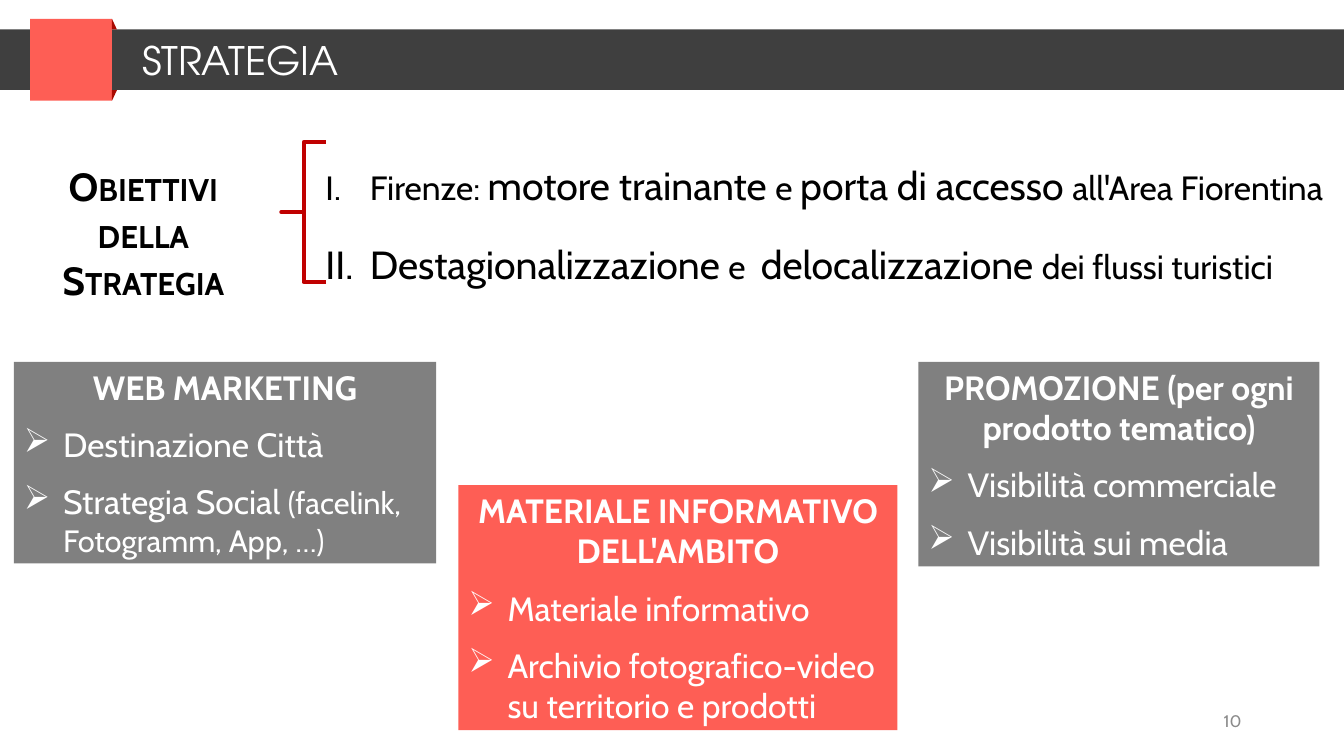
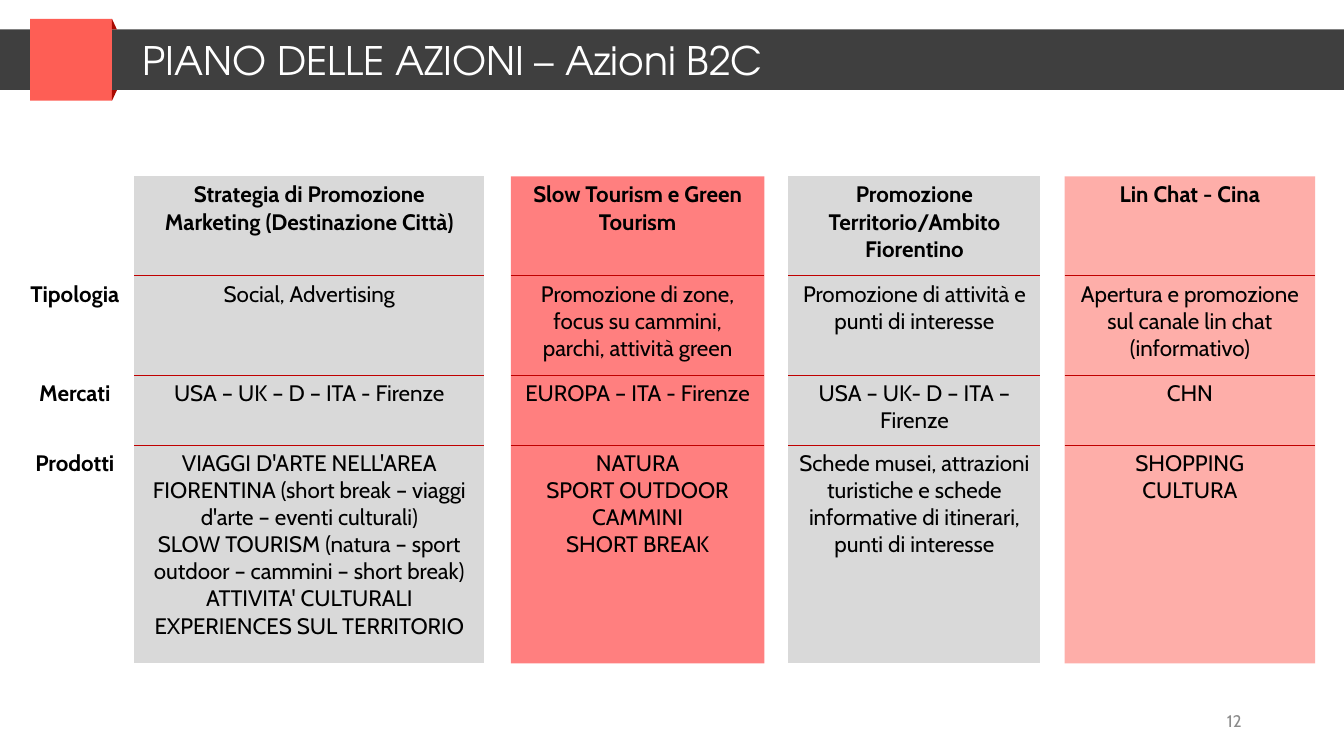
from lxml.etree import SubElement
from pptx import Presentation
from pptx.dml.color import RGBColor
from pptx.enum.shapes import MSO_SHAPE
from pptx.enum.text import MSO_ANCHOR, PP_ALIGN
from pptx.oxml.ns import qn
from pptx.util import Pt

RECTANGLE, TRIANGLE = MSO_SHAPE.RECTANGLE, MSO_SHAPE.RIGHT_TRIANGLE
BRACE = MSO_SHAPE.LEFT_BRACE
TOP, MIDDLE = MSO_ANCHOR.TOP, MSO_ANCHOR.MIDDLE
LEFT, CENTER, RIGHT = PP_ALIGN.LEFT, PP_ALIGN.CENTER, PP_ALIGN.RIGHT

TITLE_FONT, BODY_FONT = "TeX Gyre Adventor", "Cabin"
BLACK = RGBColor(0x00, 0x00, 0x00)
WHITE = RGBColor(0xFF, 0xFF, 0xFF)
CHARCOAL = RGBColor(0x3F, 0x3F, 0x3F)
GRAY = RGBColor(0x80, 0x80, 0x80)
LIGHT_GRAY = RGBColor(0xD9, 0xD9, 0xD9)
NUMBER_GRAY = RGBColor(0x8B, 0x8B, 0x8B)
CORAL = RGBColor(0xFE, 0x5E, 0x55)
FOLD_RED = RGBColor(0xA9, 0x0A, 0x01)
DARK_RED = RGBColor(0xC0, 0x00, 0x00)
RED = RGBColor(0xFF, 0x00, 0x00)

SLIDE_WIDTH, SLIDE_HEIGHT = 960, 540
INSETS = (7.2, 3.6)
NO_GRID_STYLE = "{2D5ABB26-0587-4C30-8999-92F81FD0307C}"

# Each paragraph is a list of (text, size) runs.
GOALS_LABEL = [("Obiettivi della Strategia", 28)]
GOALS = [
    [("Firenze: ", 24), ("motore trainante ", 28), ("e ", 24),
     ("porta di accesso ", 28), ("all'Area Fiorentina", 24)],
    [("Destagionalizzazione ", 28), ("e  ", 24),
     ("delocalizzazione ", 28), ("dei flussi turistici", 24)],
]

# (left, top, width, height), fill, heading, points
CARDS = [
    ((10, 258.5, 301.5, 144), GRAY, "WEB MARKETING",
     [[("Destinazione Città", 24)],
      [("Strategia Social ", 24), ("(facelink, Fotogramm, App, …)", 22)]]),
    ((327.5, 346.5, 313.5, 175), CORAL, "MATERIALE INFORMATIVO DELL'AMBITO",
     [[("Materiale informativo", 24)],
      [("Archivio fotografico-video su territorio e prodotti", 24)]]),
    ((656, 258.5, 286.5, 146), GRAY, "PROMOZIONE (per ogni prodotto tematico)",
     [[("Visibilità commerciale", 24)], [("Visibilità sui media", 24)]]),
]

ROW_LABELS = ["", "Tipologia", "Mercati", "Prodotti"]
# Fill, opacity in percent, then the cells from top to bottom
ACTIONS = [
    (LIGHT_GRAY, 100, [
        "Strategia di Promozione Marketing (Destinazione Città)",
        "Social, Advertising",
        "USA – UK – D – ITA - Firenze",
        "VIAGGI D'ARTE NELL'AREA FIORENTINA (short break – viaggi d'arte – eventi culturali)\n"
        "SLOW TOURISM (natura – sport outdoor – cammini – short break)\n"
        "ATTIVITA' CULTURALI\nEXPERIENCES SUL TERRITORIO"]),
    (RED, 50, [
        "Slow Tourism e Green Tourism",
        "Promozione di zone, focus su cammini, parchi, attività green",
        "EUROPA – ITA - Firenze",
        "NATURA\nSPORT OUTDOOR\nCAMMINI\nSHORT BREAK"]),
    (LIGHT_GRAY, 100, [
        "Promozione Territorio/Ambito Fiorentino",
        "Promozione di attività e punti di interesse",
        "USA – UK- D – ITA – Firenze",
        "Schede musei, attrazioni turistiche e schede informative di itinerari, punti di interesse"]),
    (CORAL, 50, [
        "Lin Chat - Cina",
        "Apertura e promozione sul canale lin chat (informativo)",
        "CHN",
        "SHOPPING\nCULTURA"]),
]
TABLE_LEFT, TABLE_TOP = 11, 126
COLUMN_WIDTHS = [85, 250, 19, 181, 17, 180, 17, 179]
ROW_HEIGHTS = [71, 71, 50, 156]


def add_shape(slide, kind, box, fill=None):
    shape = slide.shapes.add_shape(kind, *map(Pt, box))
    shape.shadow.inherit = False
    shape.line.fill.background()
    if fill is None:
        shape.fill.background()
    else:
        shape.fill.solid()
        shape.fill.fore_color.rgb = fill
    return shape


def set_frame(text_frame, anchor=TOP, insets=INSETS):
    text_frame.word_wrap = True
    text_frame.vertical_anchor = anchor
    text_frame.margin_left = text_frame.margin_right = Pt(insets[0])
    text_frame.margin_top = text_frame.margin_bottom = Pt(insets[1])


def add_text_box(slide, box, anchor=TOP, insets=INSETS):
    text_frame = slide.shapes.add_textbox(*map(Pt, box)).text_frame
    set_frame(text_frame, anchor, insets)
    return text_frame


def write(paragraph, runs, color, align=LEFT, bold=False, font=BODY_FONT, space=0):
    paragraph.alignment = align
    paragraph.space_before = paragraph.space_after = Pt(space)
    for text, size in runs:
        run = paragraph.add_run()
        run.text = text
        run.font.size = Pt(size)
        run.font.name = font
        run.font.bold = bold
        run.font.color.rgb = color


def set_bullet(paragraph, margin, hanging, tag, **attributes):
    properties = paragraph._p.get_or_add_pPr()
    properties.set("marL", str(Pt(margin)))
    properties.set("indent", str(-Pt(hanging)))
    SubElement(properties, qn(tag), **attributes)


def paragraphs_for(text_frame, count):
    """Return count paragraphs, starting with the one already there."""
    return [text_frame.paragraphs[0]] + [
        text_frame.add_paragraph() for _ in range(count - 1)]


def add_slide(presentation, title, number):
    """Add a slide with the title band, folded square and page number."""
    slide = presentation.slides.add_slide(presentation.slide_layouts[6])
    add_shape(slide, RECTANGLE, (0, 21, SLIDE_WIDTH, 43.2), CHARCOAL)
    add_shape(slide, RECTANGLE, (21.5, 13.5, 58.5, 58.5), CORAL)
    add_shape(slide, TRIANGLE, (80, 13.5, 3.5, 7.5), FOLD_RED)
    lower_fold = add_shape(slide, TRIANGLE, (80, 64.5, 3.5, 7.5), FOLD_RED)
    lower_fold._element.spPr.xfrm.set("flipV", "1")
    title_frame = add_text_box(slide, (101.5, 26, 759, 34), MIDDLE, (0, 0))
    write(title_frame.paragraphs[0], [(title, 28)], WHITE, font=TITLE_FONT)
    number_frame = add_text_box(slide, (678, 500.5, 216, 28.8), MIDDLE)
    write(number_frame.paragraphs[0], [(str(number), 12)], NUMBER_GRAY, RIGHT)
    return slide


def add_goals(slide):
    label = add_text_box(slide, (10, 112.5, 185, 108)).paragraphs[0]
    write(label, GOALS_LABEL, BLACK, CENTER, bold=True)
    label.runs[0]._r.get_or_add_rPr().set("cap", "small")

    brace = add_shape(slide, BRACE, (201, 101.5, 32, 100))
    brace.adjustments[0] = 0
    brace.line.color.rgb = DARK_RED
    brace.line.width = Pt(3)

    text_frame = add_text_box(slide, (226, 101.5, 731, 100), MIDDLE, (0, 0))
    for paragraph, runs in zip(paragraphs_for(text_frame, len(GOALS)), GOALS):
        write(paragraph, runs, BLACK, space=3)
        paragraph.line_spacing = 1.5
        set_bullet(paragraph, 38.2, 31.7, "a:buAutoNum", type="romanUcPeriod")


def add_card(slide, box, fill, heading, points):
    text_frame = add_shape(slide, RECTANGLE, box, fill).text_frame
    set_frame(text_frame)
    first, *others = paragraphs_for(text_frame, len(points) + 1)
    write(first, [(heading, 24)], WHITE, CENTER, bold=True, space=6)
    for paragraph, runs in zip(others, points):
        write(paragraph, runs, WHITE, space=6)
        set_bullet(paragraph, 28, 28, "a:buChar", char="➢")


def write_cell(cell, text, bold, space):
    lines = text.split("\n")
    for paragraph, line in zip(paragraphs_for(cell.text_frame, len(lines)), lines):
        write(paragraph, [(line, 16)], BLACK, CENTER, bold, space=space)


def fill_cell(cell, color, opacity):
    cell.fill.solid()
    cell.fill.fore_color.rgb = color
    if opacity < 100:
        color_element = cell._tc.tcPr.find(".//" + qn("a:srgbClr"))
        SubElement(color_element, qn("a:alpha"), val=str(opacity * 1000))


def add_border(cell, tag):
    properties = cell._tc.get_or_add_tcPr()
    line = SubElement(properties, qn(tag), w=str(Pt(0.96)))
    SubElement(SubElement(line, qn("a:solidFill")), qn("a:srgbClr"), val=str(DARK_RED))
    properties.insert(0, line)


def add_actions_table(slide):
    row_count = len(ROW_HEIGHTS)
    box = (TABLE_LEFT, TABLE_TOP, sum(COLUMN_WIDTHS), sum(ROW_HEIGHTS))
    table = slide.shapes.add_table(
        row_count, len(COLUMN_WIDTHS), *map(Pt, box)).table
    table._tbl.tblPr.find(qn("a:tableStyleId")).text = NO_GRID_STYLE
    table.first_row = table.horz_banding = False
    for column, width in zip(table.columns, COLUMN_WIDTHS):
        column.width = Pt(width)
    for row, height in zip(table.rows, ROW_HEIGHTS):
        row.height = Pt(height)
    for cell in table.iter_cells():
        cell.fill.background()

    for row, label in enumerate(ROW_LABELS):
        if label:
            write_cell(table.cell(row, 0), label, True, 6)
    for index, (color, opacity, texts) in enumerate(ACTIONS):
        for row, text in enumerate(texts):
            cell = table.cell(row, 1 + 2 * index)
            last = row == row_count - 1
            write_cell(cell, text, row == 0, 0 if last else 6)
            fill_cell(cell, color, opacity)
            if not last:
                add_border(cell, "a:lnB")
            if row > 0:
                add_border(cell, "a:lnT")


def main():
    presentation = Presentation()
    presentation.slide_width = Pt(SLIDE_WIDTH)
    presentation.slide_height = Pt(SLIDE_HEIGHT)

    strategy = add_slide(presentation, "STRATEGIA", 10)
    add_goals(strategy)
    for card in CARDS:
        add_card(strategy, *card)

    plan = add_slide(presentation, "PIANO DELLE AZIONI – Azioni B2C", 12)
    add_actions_table(plan)

    presentation.save("out.pptx")


if __name__ == "__main__":
    main()
